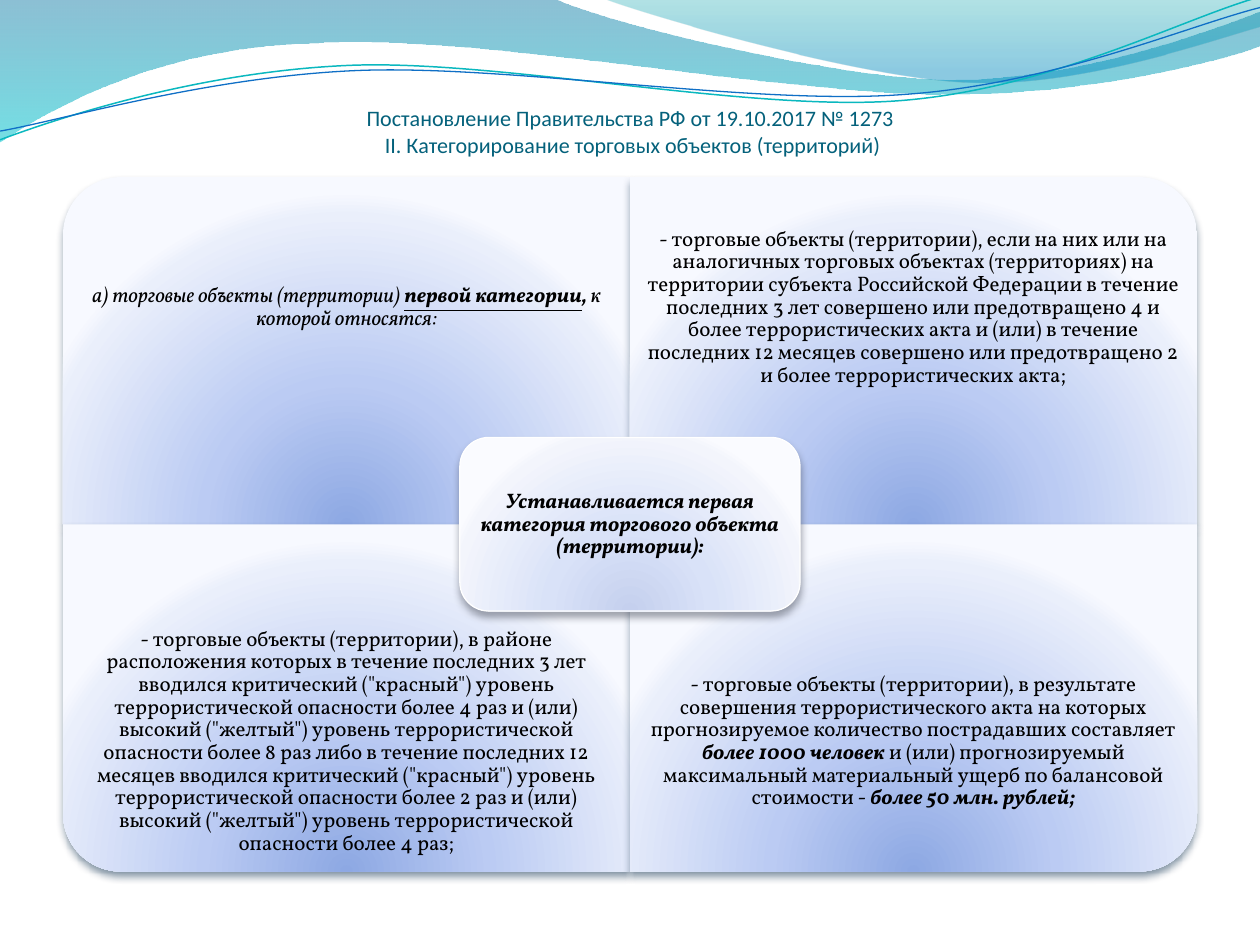
import pptx
import pptx.util
import pptx.dml.color
import pptx.enum.shapes
import pptx.enum.text
import pptx.oxml
import pptx.oxml.ns

Pt = pptx.util.Pt
qn = pptx.oxml.ns.qn
KIND = pptx.enum.shapes.MSO_SHAPE
ANCHOR = pptx.enum.text.MSO_ANCHOR
NS = pptx.oxml.ns.nsdecls("a")

LEFT, TOP, WIDE, HIGH = 36, 101.2, 324, 198.4
TEXT_HIGH = HIGH * 0.75
GLOW = '<a:path path="circle"><a:fillToRect l="50000" t="130000" r="50000" b="-30000"/></a:path>'
DOWN = '<a:lin ang="5400000" scaled="1"/>'
BLUE = [(0, "8DA8E3", 100), (43, "BBCBF3", 100), (93, "EAEFFB", 100), (100, "F7F9FF", 100)]
PALE = [(0, "C5D0EE", 100), (43, "D9E2F8", 100), (93, "F3F5FC", 100), (100, "FAFBFF", 100)]
BODY = {"name": "Vollkorn", "size": Pt(12), "color": "000000"}
HEAD = {"name": "Calibri", "size": Pt(12.6), "color": "04617B"}
ITALIC = {"italic": True}
STRONG = {"bold": True, "italic": True}

BANDS = [
    ([(0, 0), (316.8, -0.7), (342.7, 12.2, 478.1, 45.4, 545.8, 45.4),
      (614.2, 45.4, 689.8, 18.7, 720, 6.5), (720.7, 25.9),
      (707.8, 31.7, 626.4, 54.7, 537.1, 54), (447.8, 54, 275, 20.2, 185, 24.5),
      (92.9, 25.9, 33.1, 59.8, -0.7, 81.4), (0, 0)],
     [(0, "0074A1", 45), (100, "00C6CF", 55)]),
    ([(344.9, -0.7), (366.5, 7.9, 491, 44.6, 553.7, 46.8),
      (616.3, 49.7, 691.9, 23, 720, 15.1), (720, 0), (344.9, -0.7)],
     [(0, "00A1A9", 30), (80, "008BBF", 45)]),
]
WAVES = [
    ([(0, 79.9), (34.6, 67, 113.8, 41, 199.4, 37.4),
      (284.4, 33.8, 427, 64.1, 513.4, 57.6), (599.8, 51.1, 675.4, 10.8, 718.6, -1.4)],
     "0AB8BF", 0.85),
    ([(0, 74.9), (33.8, 69.1, 118.1, 43.9, 203.8, 40.3),
      (290.2, 36.7, 430.6, 60.5, 516.2, 54), (601.9, 48.2, 677.5, 15.1, 720, 4.3)],
     "0F6FC6", 0.75),
]
CARDS = [
    (0, 0, 270, [
        ("а) торговые объекты (территории) ", ITALIC),
        ("первой категории", {**STRONG, "underline": True}),
        (",", STRONG),
        (" к которой относятся:", ITALIC)]),
    (1, 0, 0, [
        ("- торговые объекты (территории), если на них или на аналогичных торговых объектах "
         "(территориях) на территории субъекта Российской Федерации в течение последних 3 лет "
         "совершено или предотвращено 4 и более террористических акта и (или) в течение последних "
         "12 месяцев совершено или предотвращено 2 и более террористических акта;", {})]),
    (0, 1, 180, [
        ('- торговые объекты (территории), в районе расположения которых в течение последних 3 лет '
         'вводился критический ("красный") уровень террористической опасности более 4 раз и (или) '
         'высокий ("желтый") уровень террористической опасности более 8 раз либо в течение '
         'последних 12 месяцев вводился критический ("красный") уровень террористической опасности '
         'более 2 раз и (или) высокий ("желтый") уровень террористической опасности более 4 раз;', {})]),
    (1, 1, 90, [
        ("- торговые объекты (территории), в результате совершения террористического акта "
         "на которых прогнозируемое количество пострадавших составляет", {}),
        (" более 1000 человек", STRONG),
        (" и (или) прогнозируемый максимальный материальный ущерб по балансовой стоимости - ", {}),
        ("более 50 млн. рублей;", STRONG)]),
]


def hue(code):
    return pptx.dml.color.RGBColor.from_string(code)


def tint(code, alpha):
    return f'<a:srgbClr val="{hue(code)}"><a:alpha val="{alpha * 1000}"/></a:srgbClr>'


def blend(shape, stops, way):
    shape.fill.gradient()
    node = shape.element.spPr.find(qn("a:gradFill"))
    marks = "".join(f'<a:gs pos="{at * 1000}">{tint(code, alpha)}</a:gs>' for at, code, alpha in stops)
    node.getparent().replace(node, pptx.oxml.parse_xml(
        f'<a:gradFill {NS} rotWithShape="1"><a:gsLst>{marks}</a:gsLst>{way}</a:gradFill>'))


def shade(shape, code):
    shape.element.spPr.find(qn("a:effectLst")).append(pptx.oxml.parse_xml(
        f'<a:outerShdw {NS} blurRad="{Pt(4.5)}" dist="{Pt(3)}" dir="5400000" '
        f'rotWithShape="0">{tint(code, 48)}</a:outerShdw>'))


def edge(shape, code, width):
    shape.line.color.rgb = hue(code)
    shape.line.width = Pt(width)


def bend(shape, steps):
    legs = iter(list(shape.element.spPr.iter(qn("a:lnTo"))))
    for step in steps[1:]:
        group = [next(legs) for _ in range(len(step) // 2)]
        if len(group) == 3:
            curve = pptx.oxml.parse_xml(f"<a:cubicBezTo {NS}/>")
            group[0].addprevious(curve)
            for leg in group:
                curve.append(leg[0])
                leg.getparent().remove(leg)


def add_curve(slide, steps, close):
    dots = [(Pt(s[i]), Pt(s[i + 1])) for s in steps for i in range(0, len(s), 2)]
    pen = slide.shapes.build_freeform(*dots[0])
    pen.add_line_segments(dots[1:], close=close)
    shape = pen.convert_to_shape()
    bend(shape, steps)
    shape.shadow.inherit = False
    shape.fill.background()
    shape.line.fill.background()
    return shape


def add_card(slide, kind, box, stops, dark, turn=0):
    x, y, w, h = box
    if turn % 180:
        x, y, w, h = x + (w - h) / 2, y + (h - w) / 2, h, w
    card = slide.shapes.add_shape(kind, Pt(x), Pt(y), Pt(w), Pt(h))
    card.rotation = turn
    card.shadow.inherit = False
    card.line.fill.background()
    blend(card, stops, GLOW)
    shade(card, dark)
    return card


def add_text(slide, box, lines, base, pads, anchor=ANCHOR.MIDDLE, space=0.9):
    frame = slide.shapes.add_textbox(*map(Pt, box)).text_frame
    sides = ("margin_left", "margin_top", "margin_right", "margin_bottom")
    form = {"word_wrap": True, "vertical_anchor": anchor, **dict(zip(sides, map(Pt, pads)))}
    for key, value in form.items():
        setattr(frame, key, value)
    para = frame.paragraphs[0]
    para.alignment = pptx.enum.text.PP_ALIGN.CENTER
    para.line_spacing = space
    for i, runs in enumerate(lines):
        if i:
            para.add_line_break()
        for text, style in runs:
            run = para.add_run()
            run.text = text
            for key, value in {**base, **style}.items():
                if key == "color":
                    run.font.color.rgb = hue(value)
                else:
                    setattr(run.font, key, value)


def main():
    deck = pptx.Presentation()
    deck.slide_width, deck.slide_height = Pt(720), Pt(540)
    slide = deck.slides.add_slide(deck.slide_layouts[6])

    for steps, stops in BANDS:
        blend(add_curve(slide, steps, True), stops, DOWN)
    for steps, code, width in WAVES:
        edge(add_curve(slide, steps, False), code, width)

    title = [[("Постановление Правительства РФ от 19.10.2017 № 1273", {})],
             [(" II. Категорирование торговых объектов (территорий)", {})]]
    add_text(slide, (36, 55.4, 648, 34.6), title, HEAD, (0, 3.6, 0, 0), ANCHOR.BOTTOM, 1.0)

    for col, row, turn, runs in CARDS:
        x, y = LEFT + col * WIDE, TOP + row * HIGH
        add_card(slide, KIND.ROUND_1_RECTANGLE, (x, y, WIDE, HIGH), BLUE, "042747", turn)
        y += row * (HIGH - TEXT_HIGH)
        add_text(slide, (x, y, WIDE, TEXT_HIGH), [runs], BODY, [6.72] * 4)

    hub = add_card(slide, KIND.ROUNDED_RECTANGLE, (262.8, 250, 194.4, 99.2), PALE, "3C414F")
    edge(hub, "FFFFFF", 0.75)
    label = [("Устанавливается первая категория торгового объекта (территории):", STRONG)]
    add_text(slide, (267.6, 254.9, 184.8, 89.4), [label], BODY, [3.6] * 4)

    deck.save("out.pptx")


if __name__ == "__main__":
    main()
